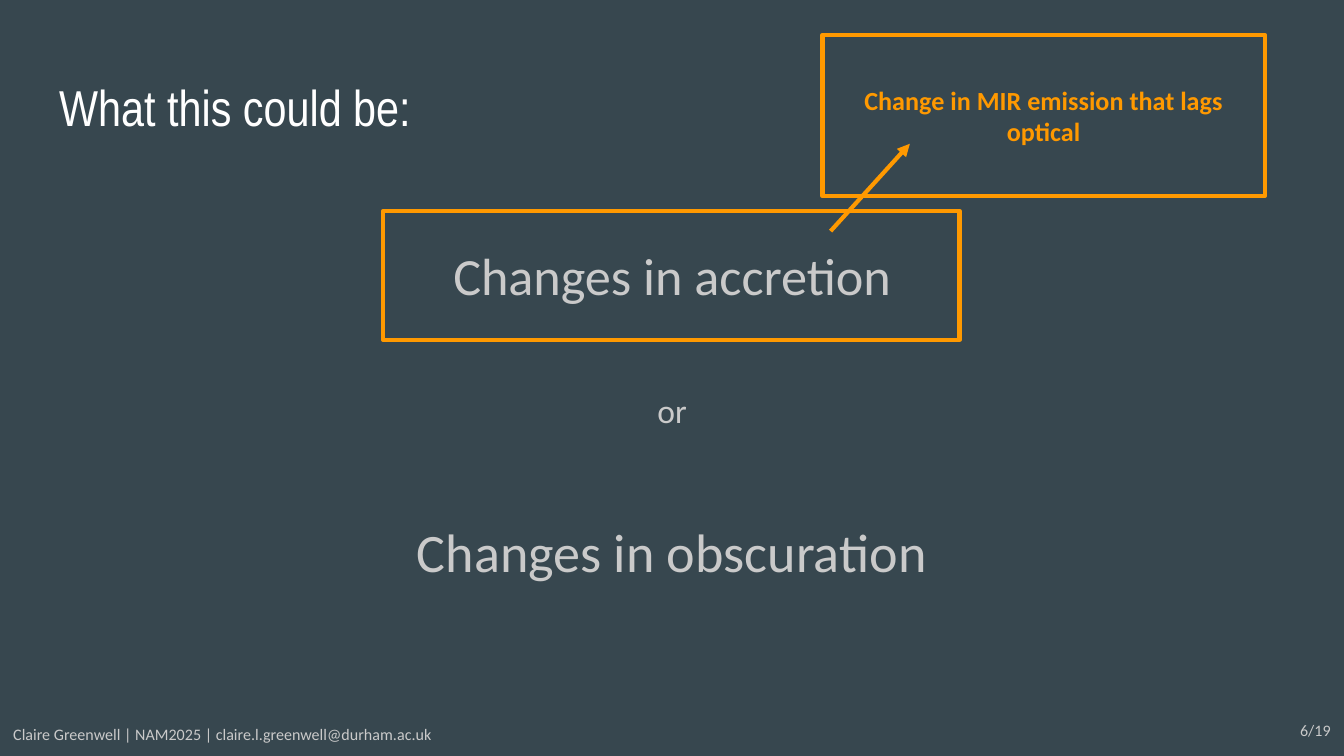
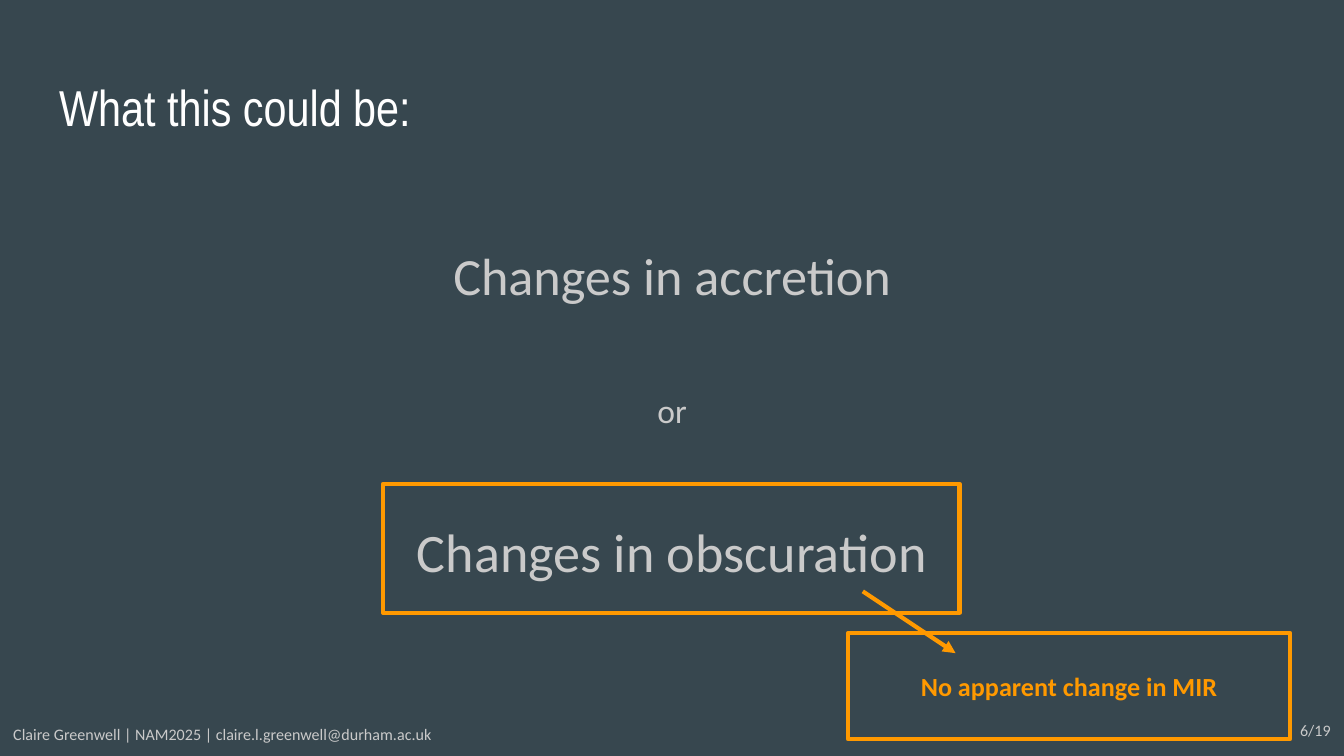
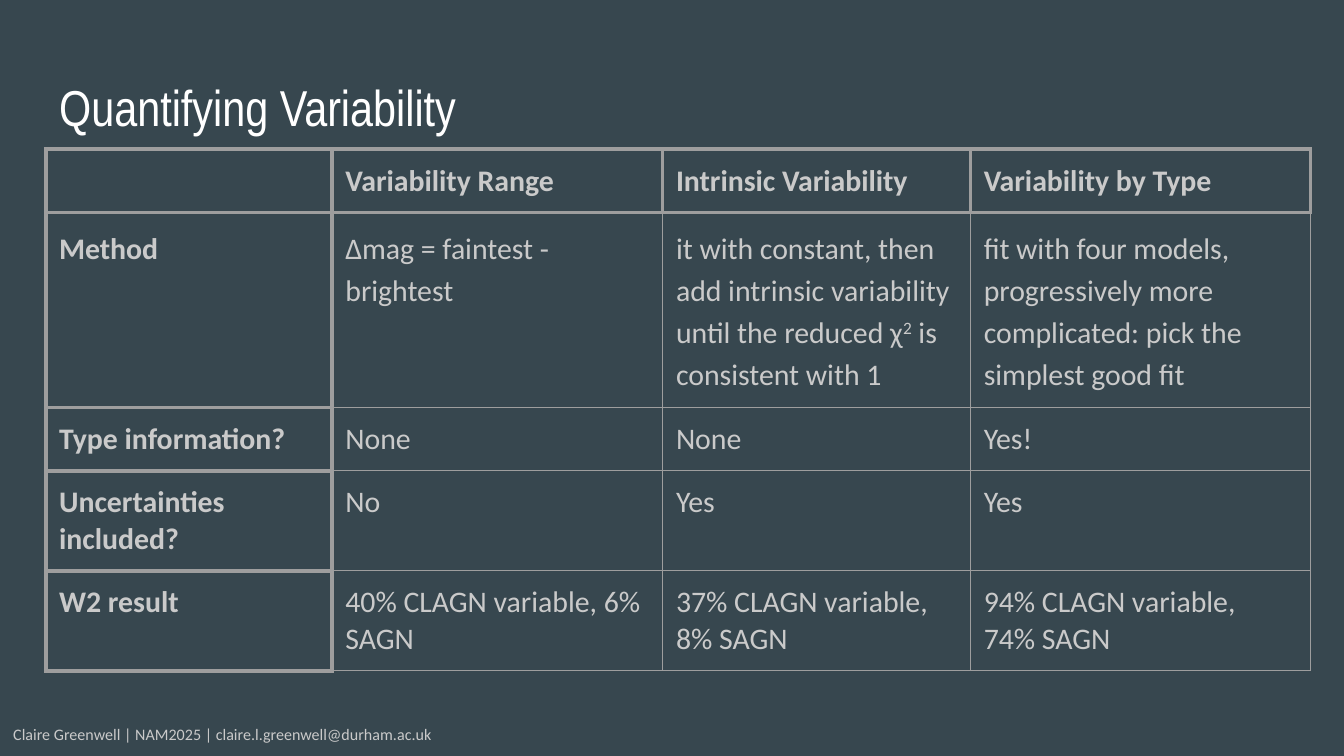
"""Build three slides on what changes in accretion, obscuration and variability could mean."""
from dataclasses import dataclass

from lxml.etree import SubElement
from pptx import Presentation
from pptx.dml.color import RGBColor as RGB
from pptx.enum.shapes import MSO_CONNECTOR as CONN, MSO_SHAPE as SHAPE
from pptx.enum.text import MSO_ANCHOR as ANCHOR, PP_ALIGN as ALIGN
from pptx.oxml.ns import qn
from pptx.util import Inches, Pt


@dataclass(frozen=True)
class Theme:
    back: str = "37474F"
    title: str = "FFFFFF"
    text: str = "CACACA"
    accent: str = "FF9900"
    grid: str = "9E9E9E"
    title_font: str = "Arial Narrow"
    body_font: str = "Calibri"
    title_size: float = 27
    first_size: float = 28
    second_size: float = 29
    or_size: float = 18
    table_size: float = 16
    note_size: float = 14
    footer_size: float = 8.6
    thick: float = 2.25
    thin: float = 0.75
    inset: float = 0.1


def apply(obj, values):
    for name, value in values.items():
        setattr(obj, name, value)


class Deck:
    def __init__(self, theme):
        self.t = theme
        self.prs = Presentation()
        width = Inches(10)
        apply(self.prs, {"slide_width": width, "slide_height": width * 9 // 16})
        fill = self.prs.slide_master.background.fill
        fill.solid()
        fill.fore_color.rgb = RGB.from_string(theme.back)
        self.s = None

    def margins(self):
        sides = ("left", "top", "right", "bottom")
        return {f"margin_{side}": Inches(self.t.inset) for side in sides}

    def run(self, p, text, size, color=None, **fmt):
        r = p.add_run()
        r.text = text
        apply(r.font, {"name": self.t.body_font, "size": Pt(size), **fmt})
        r.font.color.rgb = RGB.from_string(color or self.t.text)
        return r

    def frame(self, tf, **fmt):
        apply(tf, {"word_wrap": True, **self.margins(), **fmt})
        return tf

    def slide(self, title):
        self.s = self.prs.slides.add_slide(self.prs.slide_layouts[5])
        sp = self.s.shapes.title
        box = dict(zip(("left", "top", "width", "height"), map(Inches, (0.34, 0.49, 9.32, 0.63))))
        apply(sp, box)
        p = self.frame(sp.text_frame, vertical_anchor=ANCHOR.BOTTOM).paragraphs[0]
        p.alignment = ALIGN.LEFT
        self.run(p, title, self.t.title_size, self.t.title, name=self.t.title_font)

    def textbox(self, box, **fmt):
        return self.frame(self.s.shapes.add_textbox(*map(Inches, box)).text_frame, **fmt)

    def small(self, text, left, top, align=ALIGN.LEFT):
        p = self.textbox((left, top, 3.58, 0.34), margin_top=Inches(0.13)).paragraphs[0]
        apply(p, {"alignment": align, "line_spacing": 0.95, "space_after": Pt(12)})
        self.run(p, text, self.t.footer_size)

    def footer(self):
        self.small("Claire Greenwell | NAM2025 | claire.l.greenwell@durham.ac.uk", 0, 5.32)

    def page(self, text):
        self.small(text, 6.42, 5.29, ALIGN.RIGHT)

    def options(self):
        tf = self.textbox((0.34, 1.26, 9.32, 3.74), margin_top=Inches(0.48))
        lines = (("Changes in accretion", self.t.first_size, 0),
                 ("or", self.t.or_size, 42),
                 ("Changes in obscuration", self.t.second_size, 42))
        for i, (text, size, gap) in enumerate(lines):
            p = tf.add_paragraph() if i else tf.paragraphs[0]
            apply(p, {"alignment": ALIGN.CENTER, "line_spacing": 1.15, "space_before": Pt(gap)})
            self.run(p, text, size)

    def outline(self, box, text=""):
        sp = self.s.shapes.add_shape(SHAPE.RECTANGLE, *map(Inches, box))
        sp.shadow.inherit = False
        sp.fill.background()
        self.stroke(sp.line)
        if text:
            p = self.frame(sp.text_frame, vertical_anchor=ANCHOR.MIDDLE).paragraphs[0]
            p.alignment = ALIGN.CENTER
            self.run(p, text, self.t.note_size, self.t.accent, bold=True)

    def stroke(self, line):
        line.color.rgb = RGB.from_string(self.t.accent)
        line.width = Pt(self.t.thick)

    def arrow(self, start, end):
        c = self.s.shapes.add_connector(CONN.STRAIGHT, *map(Inches, (*start, *end)))
        self.stroke(c.line)
        SubElement(c.line._get_or_add_ln(), qn("a:tailEnd"), type="triangle")
        SubElement(c._element.spPr, qn("a:effectLst"))

    def borders(self, cell, widths):
        tc_pr = cell._tc.get_or_add_tcPr()
        for i, (side, width) in enumerate(zip("LRTB", widths)):
            ln = SubElement(tc_pr, qn(f"a:ln{side}"), w=str(Pt(width)))
            SubElement(SubElement(ln, qn("a:solidFill")), qn("a:srgbClr"), val=self.t.grid)
            tc_pr.insert(i, ln)

    def cell(self, cell, text, head, roomy):
        cell.fill.background()
        apply(cell, {"vertical_anchor": ANCHOR.TOP, **self.margins()})
        tf = cell.text_frame
        for i, line in enumerate(text.split("\n")):
            p = tf.add_paragraph() if i else tf.paragraphs[0]
            if roomy:
                apply(p, {"line_spacing": 1.15, "space_after": Pt(12)})
            if not line:
                SubElement(p._p, qn("a:endParaRPr"), sz=str(self.t.table_size * 100))
                continue
            for j, part in enumerate(line.split("^")):
                r = self.run(p, part, self.t.table_size, bold=head)
                if j % 2:
                    r.font._element.set("baseline", "30000")

    def table(self, left, top, widths, row_height, rows):
        box = (left, top, sum(widths), row_height * len(rows))
        tbl = self.s.shapes.add_table(len(rows), len(widths), *map(Inches, box)).table
        apply(tbl, {"first_row": False, "horz_banding": False})
        for col, width in zip(tbl.columns, widths):
            col.width = Inches(width)
        thick, thin = self.t.thick, self.t.thin
        for y, row in enumerate(rows):
            for x, text in enumerate(row):
                cell = tbl.cell(y, x)
                head = x == 0 or y == 0
                self.cell(cell, text, head, y == 1)
                edge = thick if head else thin
                self.borders(cell, (thick if x <= 1 else edge, edge,
                                    thick if y <= 1 else edge, edge))


def could_be(deck, frame_top, note_box, note, start, end):
    deck.slide("What this could be:")
    deck.options()
    deck.outline((2.85, frame_top, 4.29, 0.96))
    deck.page("6/19")
    deck.outline(note_box, note)
    deck.arrow(start, end)
    deck.footer()


def main():
    deck = Deck(Theme())
    could_be(deck, 1.57, (6.12, 0.26, 3.29, 1.2), "Change in MIR emission that lags optical",
             (6.18, 1.72), (6.77, 1.07))
    could_be(deck, 3.6, (6.31, 4.71, 3.29, 0.79), "No apparent change in MIR",
             (6.42, 4.4), (7.11, 4.86))

    deck.slide("Quantifying Variability")
    deck.table(0.34, 1.11, (2.13, 2.46, 2.29, 2.53), 0.42, (
        ("", "Variability Range", "Intrinsic Variability", "Variability by Type"),
        ("Method", "Δmag = faintest - brightest",
         "it with constant, then add intrinsic variability until the reduced χ^2^ is "
         "consistent with 1",
         "fit with four models, progressively more complicated: pick the simplest good fit"),
        ("Type information?", "None", "None", "Yes!"),
        ("Uncertainties included?", "No", "Yes", "Yes"),
        ("W2 result", "40% CLAGN variable, 6% SAGN", "37% CLAGN variable, 8% SAGN",
         "94% CLAGN variable,\n74% SAGN"),
    ))
    deck.footer()
    deck.prs.save("out.pptx")


if __name__ == "__main__":
    main()
